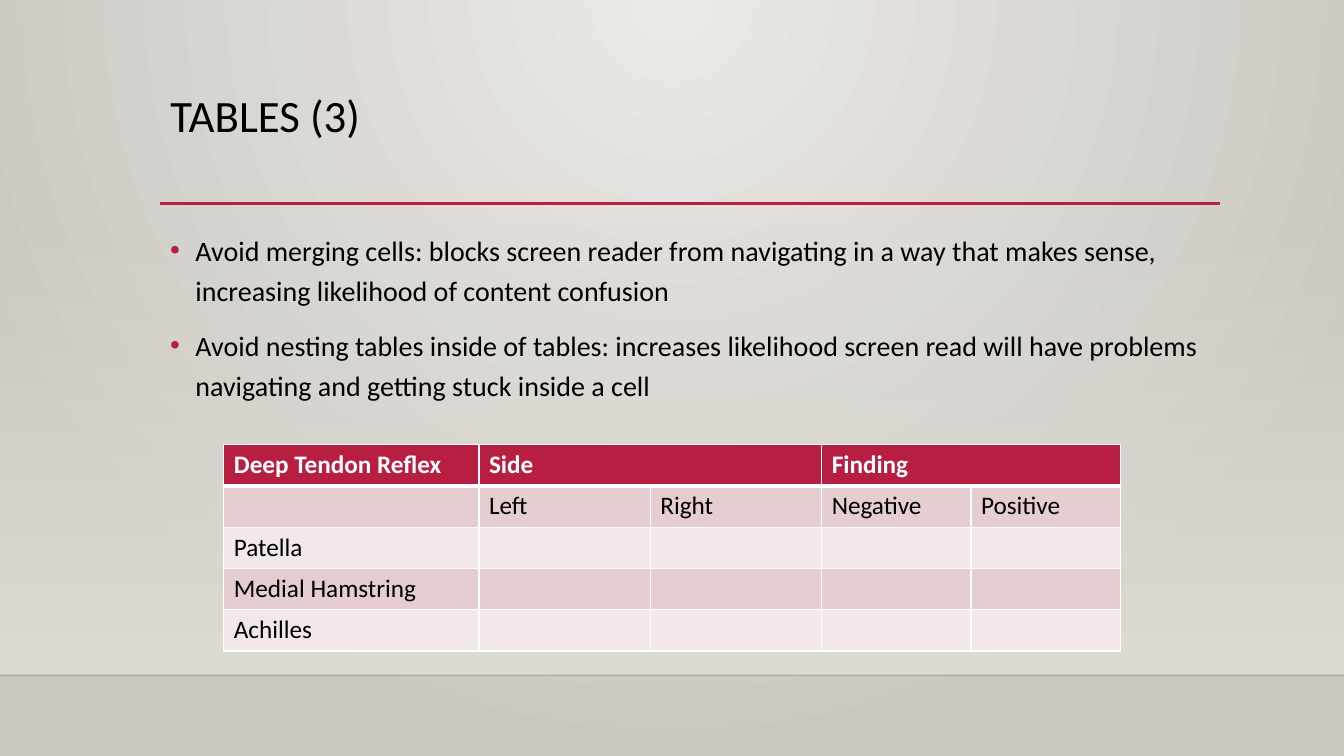
"""Build the "Tables (3)" slide about accessible tables."""
from lxml import etree
from pptx import Presentation
from pptx.dml.color import RGBColor
from pptx.enum.shapes import MSO_CONNECTOR, MSO_SHAPE
from pptx.enum.text import MSO_ANCHOR, MSO_AUTO_SIZE, PP_ALIGN
from pptx.oxml.ns import qn
from pptx.util import Inches, Pt

LEFT, TOP = PP_ALIGN.LEFT, MSO_ANCHOR.TOP
NO_FIT = MSO_AUTO_SIZE.NONE
STRAIGHT, RECTANGLE = MSO_CONNECTOR.STRAIGHT, MSO_SHAPE.RECTANGLE
TITLE_ONLY = 5

TITLE = "TABLES (3)"
ADVICE = [
    "Avoid merging cells: blocks screen reader from navigating in a way that "
    "makes sense, increasing likelihood of content confusion",
    "Avoid nesting tables inside of tables: increases likelihood screen read "
    "will have problems navigating and getting stuck inside a cell",
]
REFLEXES = [
    ["Deep Tendon Reflex", "Side", "", "Finding", ""],
    ["", "Left", "Right", "Negative", "Positive"],
    ["Patella", "", "", "", ""],
    ["Medial Hamstring", "", "", "", ""],
    ["Achilles", "", "", "", ""],
]
HEADER_SPANS = [(1, 2), (3, 4)]
COLUMN_WIDTHS = [2.53, 1.7, 1.7, 1.48, 1.48]
ROW_HEIGHT = 0.41

COLORS = {
    "center": "ECEAE7", "edge": "CAC7C1", "wall": "DFDBD5", "floor": "000001",
    "accent": "B71E42", "dark": "E6CDCF", "light": "F3E8E9",
    "text": "000000", "white": "FFFFFF",
}
FONT = "Calibri"
WIDTH, HEIGHT = 13.33, 7.5
MARGIN, CONTENT_WIDTH = 1.59, 10.5
WALL_TOP, FLOOR = 2.21, 6.7


def color(name):
    return RGBColor.from_string(COLORS[name])


def add_xml(parent, tag, **attributes):
    return etree.SubElement(parent, qn(tag), attributes)


def set_alpha(element, percent):
    add_xml(next(element.iter(qn("a:srgbClr"))), "a:alpha", val=str(percent * 1000))


def set_gradient(fill, first, last):
    fill.gradient()
    for stop, name in zip(fill.gradient_stops, (first, last)):
        stop.color.rgb = color(name)


def add_run(paragraph, text, size, name="text", bold=False):
    run = paragraph.add_run()
    run.text = text
    run.font.name, run.font.size, run.font.bold = FONT, Pt(size), bold
    run.font.color.rgb = color(name)


def add_rule(slide, left, right, y, name, weight):
    rule = slide.shapes.add_connector(
        STRAIGHT, Inches(left), Inches(y), Inches(right), Inches(y))
    rule.line.color.rgb = color(name)
    rule.line.width = Pt(weight)
    add_xml(rule._element.spPr, "a:effectLst")
    return rule


def prepare_frame(shape):
    frame = shape.text_frame
    frame.word_wrap, frame.auto_size, frame.vertical_anchor = True, NO_FIT, TOP
    return frame


def add_backdrop(slide):
    set_gradient(slide.background.fill, "center", "edge")
    gradient = next(slide._element.iter(qn("a:gradFill")))
    gradient.remove(gradient.find(qn("a:lin")))
    circle = add_xml(gradient, "a:path", path="circle")
    add_xml(circle, "a:fillToRect", l="43000", t="0", r="43000", b="100000")

    wall = slide.shapes.add_shape(
        RECTANGLE, 0, Inches(WALL_TOP), Inches(WIDTH), Inches(FLOOR - WALL_TOP))
    wall.shadow.inherit = False
    wall.line.fill.background()
    set_gradient(wall.fill, "wall", "wall")
    wall.fill.gradient_angle = 270
    set_alpha(wall._element.spPr, 0)
    floor = add_rule(slide, 0, WIDTH, FLOOR, "floor", 1)
    set_alpha(floor._element.spPr, 20)
    add_rule(slide, MARGIN, 12.1, 2.02, "accent", 2.5)


def format_title(slide):
    title = slide.shapes.title
    title.left, title.top = Inches(MARGIN), Inches(0.88)
    title.width, title.height = Inches(CONTENT_WIDTH), Inches(1.15)
    paragraph = prepare_frame(title).paragraphs[0]
    paragraph.alignment, paragraph.line_spacing = LEFT, 0.9
    add_run(paragraph, TITLE, 32)


def add_advice(slide):
    box = slide.shapes.add_textbox(
        Inches(MARGIN), Inches(2.2), Inches(CONTENT_WIDTH), Inches(2.03))
    frame = prepare_frame(box)
    for index, text in enumerate(ADVICE):
        paragraph = frame.add_paragraph() if index else frame.paragraphs[0]
        properties = paragraph._p.get_or_add_pPr()
        properties.set("marL", str(Inches(0.25)))
        properties.set("indent", str(-Inches(0.25)))
        bullet_color = add_xml(properties, "a:buClr")
        add_xml(bullet_color, "a:srgbClr", val=COLORS["accent"])
        add_xml(properties, "a:buFont", typeface="Arial")
        add_xml(properties, "a:buChar", char="•")
        paragraph.line_spacing = 1.2
        if index:
            paragraph.space_before = Pt(10)
        add_run(paragraph, text, 20)


def set_borders(cell, weights):
    properties = cell._tc.get_or_add_tcPr()
    for position, (side, weight) in enumerate(weights.items()):
        line = etree.Element(qn(f"a:ln{side}"), w=str(Pt(weight)))
        add_xml(add_xml(line, "a:solidFill"), "a:srgbClr", val=COLORS["white"])
        properties.insert(position, line)


def add_reflex_table(slide):
    frame = slide.shapes.add_table(
        len(REFLEXES), len(COLUMN_WIDTHS), Inches(2.22), Inches(4.41),
        Inches(sum(COLUMN_WIDTHS)), Inches(ROW_HEIGHT * len(REFLEXES)))
    table = frame.table
    for column, width in zip(table.columns, COLUMN_WIDTHS):
        column.width = Inches(width)
    for row_index, texts in enumerate(REFLEXES):
        table.rows[row_index].height = Inches(ROW_HEIGHT)
        header = row_index == 0
        band = "accent" if header else "dark" if row_index % 2 else "light"
        weights = {"L": 1, "R": 1, "T": 3 if row_index == 1 else 1,
                   "B": 3 if header else 1}
        for column_index, text in enumerate(texts):
            cell = table.cell(row_index, column_index)
            cell.fill.solid()
            cell.fill.fore_color.rgb = color(band)
            set_borders(cell, weights)
            if text:
                add_run(cell.text_frame.paragraphs[0], text, 18,
                        "white" if header else "text", header)
    for first, last in HEADER_SPANS:
        table.cell(0, first).merge(table.cell(0, last))


def main():
    presentation = Presentation()
    presentation.slide_width, presentation.slide_height = Inches(WIDTH), Inches(HEIGHT)
    slide = presentation.slides.add_slide(presentation.slide_layouts[TITLE_ONLY])
    add_backdrop(slide)
    format_title(slide)
    add_advice(slide)
    add_reflex_table(slide)
    presentation.save("out.pptx")


if __name__ == "__main__":
    main()
